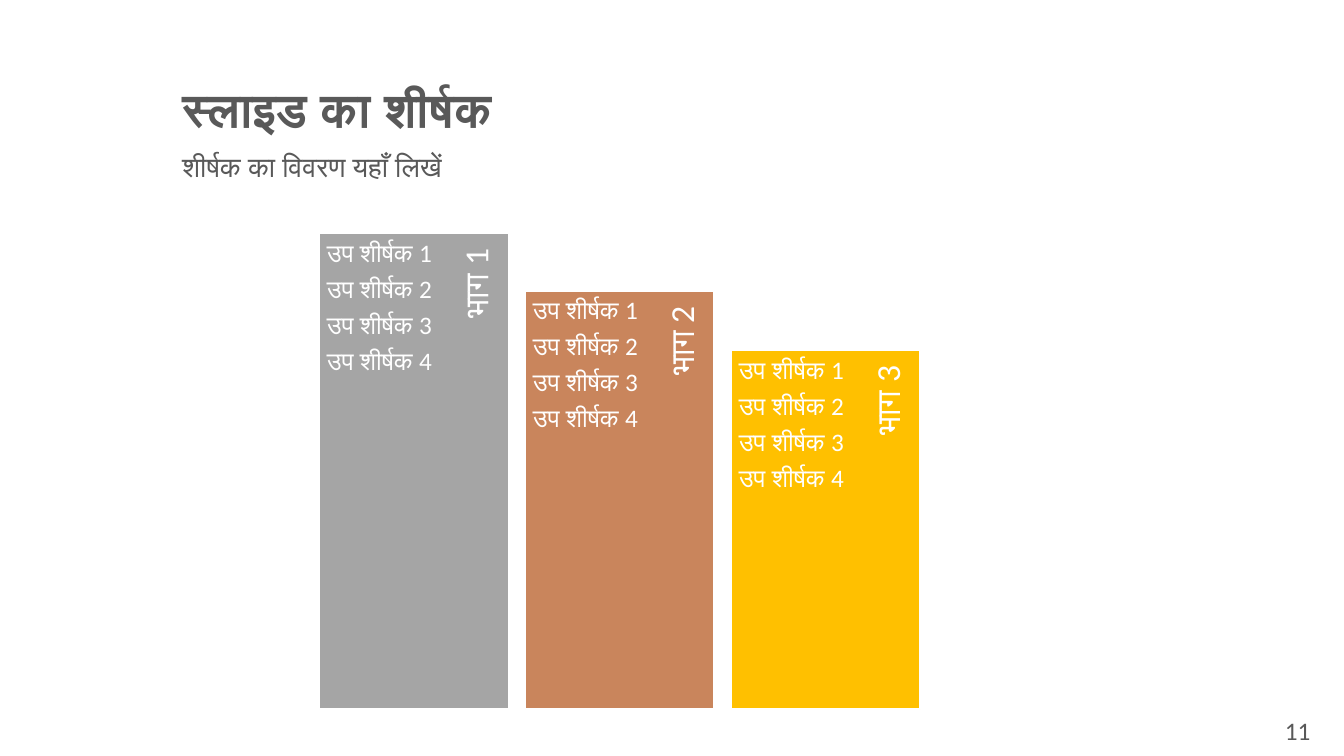
from pptx import Presentation
from pptx.dml.color import RGBColor
from pptx.enum.shapes import MSO_SHAPE
from pptx.enum.text import MSO_ANCHOR, MSO_AUTO_SIZE, PP_ALIGN
from pptx.util import Cm, Pt

FONT = "Calibri"
TEXT_GREY = "595959"
WHITE = "FFFFFF"
SUBHEADINGS = [f"उप शीर्षक {number}" for number in range(1, 5)]
# Heading, top edge in centimetres, fill
SECTIONS = [("भाग 1", 5.88, "A5A5A5"), ("भाग 2", 7.33, "C9855C"), ("भाग 3", 8.84, "FFC000")]
COLUMN_LEFT, COLUMN_PITCH = 8.06, 5.19
COLUMN_WIDTH, COLUMN_BOTTOM = 4.75, 17.87


def color(value):
    return RGBColor.from_string(value)


def place(box, left, top, width, height):
    box.left, box.top, box.width, box.height = Cm(left), Cm(top), Cm(width), Cm(height)


def write(box, lines, size, tint, bold=False, align=PP_ALIGN.LEFT,
          anchor=MSO_ANCHOR.TOP, margins=(0.25, 0.13, 0.25, 0.13),
          spacing=0.9, after=0):
    """Fill a box with one paragraph per line; margins run left, top, right, bottom."""
    frame = box.text_frame
    frame.text = "\n".join(lines)
    frame.word_wrap = True
    frame.auto_size = MSO_AUTO_SIZE.NONE
    frame.vertical_anchor = anchor
    (frame.margin_left, frame.margin_top,
     frame.margin_right, frame.margin_bottom) = map(Cm, margins)
    for paragraph in frame.paragraphs:
        paragraph.alignment = align
        paragraph.line_spacing = spacing
        paragraph.space_before = Pt(0)
        paragraph.space_after = Pt(after)
        for span in paragraph.runs:
            span.font.name = FONT
            span.font.size = Pt(size)
            span.font.bold = bold
            span.font.color.rgb = color(tint)


def add_text(shapes, left, top, width, height, lines, size, tint, **style):
    box = shapes.add_textbox(Cm(left), Cm(top), Cm(width), Cm(height))
    write(box, lines, size, tint, **style)
    return box


def add_heading(page, left, top, width):
    place(page.shapes.title, left, top, width, 1.4)
    write(page.shapes.title, ["स्लाइड का शीर्षक"], 34, TEXT_GREY,
          bold=True, anchor=MSO_ANCHOR.MIDDLE)
    add_text(page.shapes, left, top + 1.6, width, 1.6,
             ["शीर्षक का विवरण यहाँ लिखें"], 20, TEXT_GREY)


def add_column(page, left, top, width, height, heading, fill):
    """Group a bar, its upward-reading heading and its list."""
    shapes = page.shapes.add_group_shape().shapes
    bar = shapes.add_shape(MSO_SHAPE.RECTANGLE, Cm(left), Cm(top), Cm(width), Cm(height))
    bar.shadow.inherit = False
    bar.fill.solid()
    bar.fill.fore_color.rgb = color(fill)
    bar.line.color.rgb = color(WHITE)
    bar.line.width = Pt(1)

    length, thickness = 0.9 * height, 1.24
    center_x, center_y = left + 4.01, top + length / 2
    label = add_text(shapes, center_x - length / 2, center_y - thickness / 2,
                     length, thickness, [heading], 24, WHITE, align=PP_ALIGN.RIGHT,
                     anchor=MSO_ANCHOR.MIDDLE, margins=(0.25, 0, 0.38, 0.08))
    label.rotation = 270

    add_text(shapes, left, top, 3.38, height, SUBHEADINGS, 18, WHITE,
             margins=(0.18,) * 4, after=6.3)


def add_page_number(page, left, top, width, height):
    add_text(page.shapes, left, top, width, height, ["11"], 18, TEXT_GREY,
             align=PP_ALIGN.CENTER, spacing=1.0)


def main():
    deck = Presentation()
    deck.slide_width, deck.slide_height = Cm(33.87), Cm(19.05)
    page = deck.slides.add_slide(deck.slide_layouts[5])
    add_heading(page, 4.34, 2.13, 24.4)
    for index, (heading, top, fill) in enumerate(SECTIONS):
        add_column(page, COLUMN_LEFT + index * COLUMN_PITCH, top, COLUMN_WIDTH,
                   COLUMN_BOTTOM - top, heading, fill)
    add_page_number(page, 31.54, 17.9, 2.33, 1.15)
    deck.save("out.pptx")


if __name__ == "__main__":
    main()
